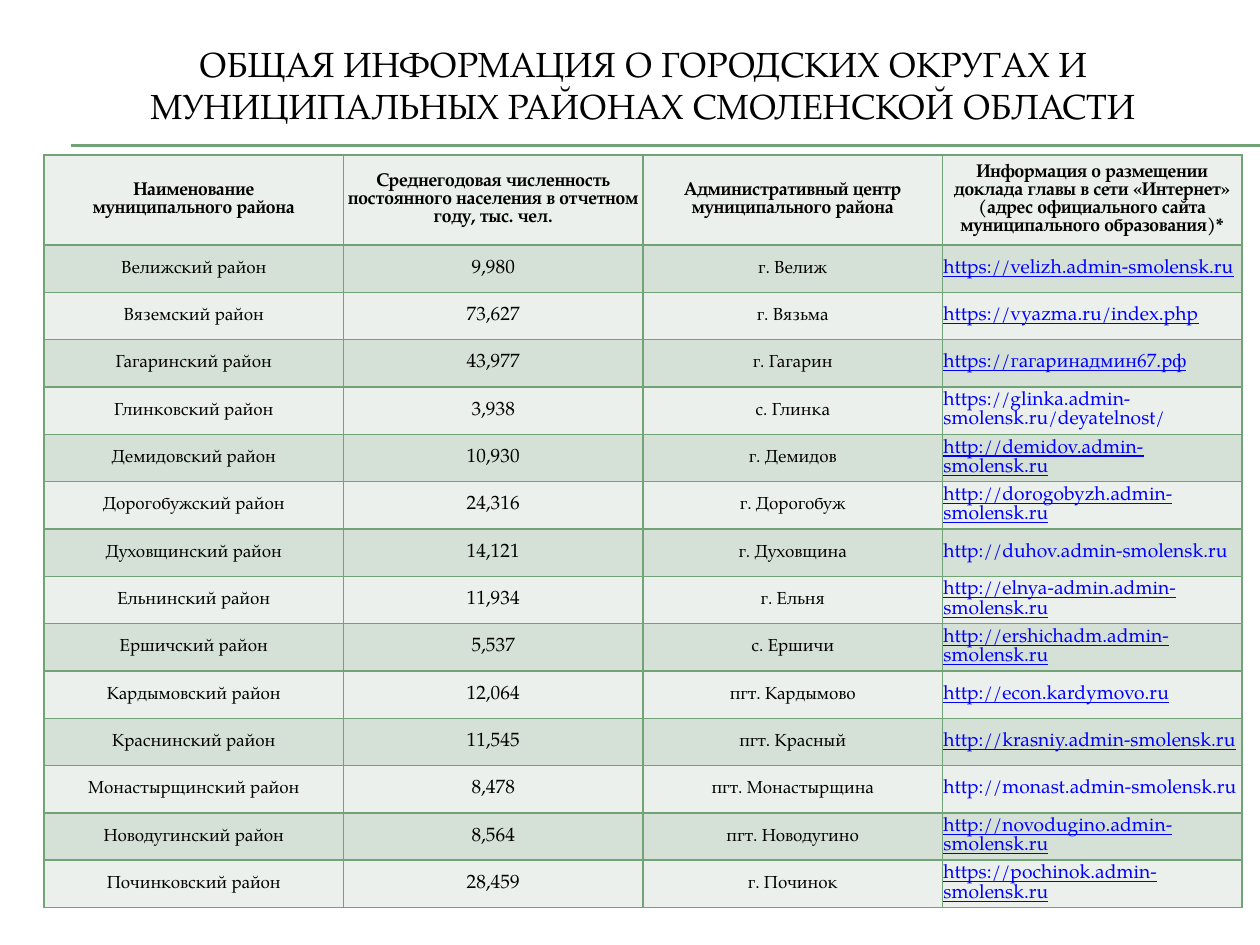
from lxml.etree import SubElement
from pptx import Presentation
from pptx.dml.color import RGBColor
from pptx.enum.shapes import MSO_CONNECTOR
from pptx.enum.text import MSO_ANCHOR, PP_ALIGN
from pptx.oxml import parse_xml
from pptx.oxml.ns import nsdecls, qn
from pptx.util import Pt

SCALE = 914400 / 126
FONT = "TeX Gyre Pagella"
BLACK = RGBColor(0x00, 0x00, 0x00)
BLUE = RGBColor(0x00, 0x00, 0xFF)
GREEN = RGBColor(0x72, 0xA3, 0x76)
LIGHT = RGBColor(0xEB, 0xF0, 0xEC)
DARK = RGBColor(0xD5, 0xE0, 0xD6)

TITLE = "ОБЩАЯ ИНФОРМАЦИЯ О ГОРОДСКИХ ОКРУГАХ И МУНИЦИПАЛЬНЫХ РАЙОНАХ СМОЛЕНСКОЙ ОБЛАСТИ"
HEADERS = (
    "Наименование\nмуниципального района",
    "Среднегодовая численность постоянного населения в отчетном году, тыс. чел.",
    "Административный центр муниципального района",
    "Информация о размещении доклада главы в сети «Интернет» "
    "(адрес официального сайта муниципального образования)*",
)
DISTRICTS = [
    ("Велижский район", "9,980", "г. Велиж", "https://velizh.admin-smolensk.ru"),
    ("Вяземский район", "73,627", "г. Вязьма", "https://vyazma.ru/index.php"),
    ("Гагаринский район", "43,977", "г. Гагарин", "https://гагаринадмин67.рф"),
    ("Глинковский район", "3,938", "с. Глинка", "https://glinka.admin-smolensk.ru/deyatelnost/"),
    ("Демидовский район", "10,930", "г. Демидов", "http://demidov.admin-smolensk.ru"),
    ("Дорогобужский район", "24,316", "г. Дорогобуж", "http://dorogobyzh.admin-smolensk.ru"),
    ("Духовщинский район", "14,121", "г. Духовщина", "http://duhov.admin-smolensk.ru"),
    ("Ельнинский район", "11,934", "г. Ельня", "http://elnya-admin.admin-smolensk.ru"),
    ("Ершичский район", "5,537", "с. Ершичи", "http://ershichadm.admin-smolensk.ru"),
    ("Кардымовский район", "12,064", "пгт. Кардымово", "http://econ.kardymovo.ru"),
    ("Краснинский район", "11,545", "пгт. Красный", "http://krasniy.admin-smolensk.ru"),
    ("Монастырщинский район", "8,478", "пгт. Монастырщина", "http://monast.admin-smolensk.ru"),
    ("Новодугинский район", "8,564", "пгт. Новодугино", "http://novodugino.admin-smolensk.ru"),
    ("Починковский район", "28,459", "г. Починок", "https://pochinok.admin-smolensk.ru"),
]
PLAIN_LINKS = ("Глинковский район", "Духовщинский район", "Монастырщинский район")
SIZES = (10, 11, 10, 11)


def px(value):
    return round(value * SCALE)


def style_text(frame, size, spacing, color=BLACK, align=PP_ALIGN.CENTER, bold=False, underline=False):
    for paragraph in frame.paragraphs:
        paragraph.alignment = align
        paragraph.line_spacing = Pt(spacing)
        font = paragraph.font
        font.name = FONT
        font.size = Pt(size)
        font.bold = bold
        font.underline = underline
        font.color.rgb = color


presentation = Presentation()
presentation.slide_width = px(1260)
presentation.slide_height = px(945)
slide = presentation.slides.add_slide(presentation.slide_layouts[6])

for y in (145, 146):
    rule = slide.shapes.add_connector(MSO_CONNECTOR.STRAIGHT, px(71), px(y), px(1260), px(y))
    rule.line.color.rgb = GREEN
    rule.line.width = Pt(0.75)
    SubElement(rule.element.spPr, qn("a:effectLst"))

title = slide.shapes.add_textbox(px(44), px(27), px(1198), px(116))
title.text_frame.word_wrap = True
title.text_frame.vertical_anchor = MSO_ANCHOR.MIDDLE
title.text_frame.text = TITLE
style_text(title.text_frame, 20, 24)

rows = [HEADERS] + DISTRICTS
header_height, body_height = 90, 663
table = slide.shapes.add_table(
    len(rows), len(HEADERS), px(44), px(155), px(1198), px(header_height + body_height)
).table
for column in table.columns:
    column.width = px(1198 / len(HEADERS))

for row_index, values in enumerate(rows):
    table.rows[row_index].height = px(header_height if row_index == 0 else body_height / len(DISTRICTS))
    for column_index, value in enumerate(values):
        cell = table.cell(row_index, column_index)
        cell.text = value
        cell.vertical_anchor = MSO_ANCHOR.MIDDLE
        cell.margin_left = cell.margin_right = cell.margin_top = px(1)
        cell.margin_bottom = 0
        cell.fill.solid()
        cell.fill.fore_color.rgb = DARK if row_index % 2 else LIGHT
        properties = cell._tc.get_or_add_tcPr()
        for position, side in enumerate(("lnL", "lnR", "lnT", "lnB")):
            properties.insert(position, parse_xml(
                f'<a:{side} {nsdecls("a")} w="12700"><a:solidFill>'
                f'<a:srgbClr val="{GREEN}"/></a:solidFill></a:{side}>'
            ))
        if row_index == 0:
            style_text(cell.text_frame, 10.5, 10.3, bold=True)
        elif column_index == 3:
            style_text(cell.text_frame, 11, 11, BLUE, PP_ALIGN.LEFT,
                       underline=values[0] not in PLAIN_LINKS)
        else:
            style_text(cell.text_frame, SIZES[column_index], SIZES[column_index])

presentation.save("out.pptx")
